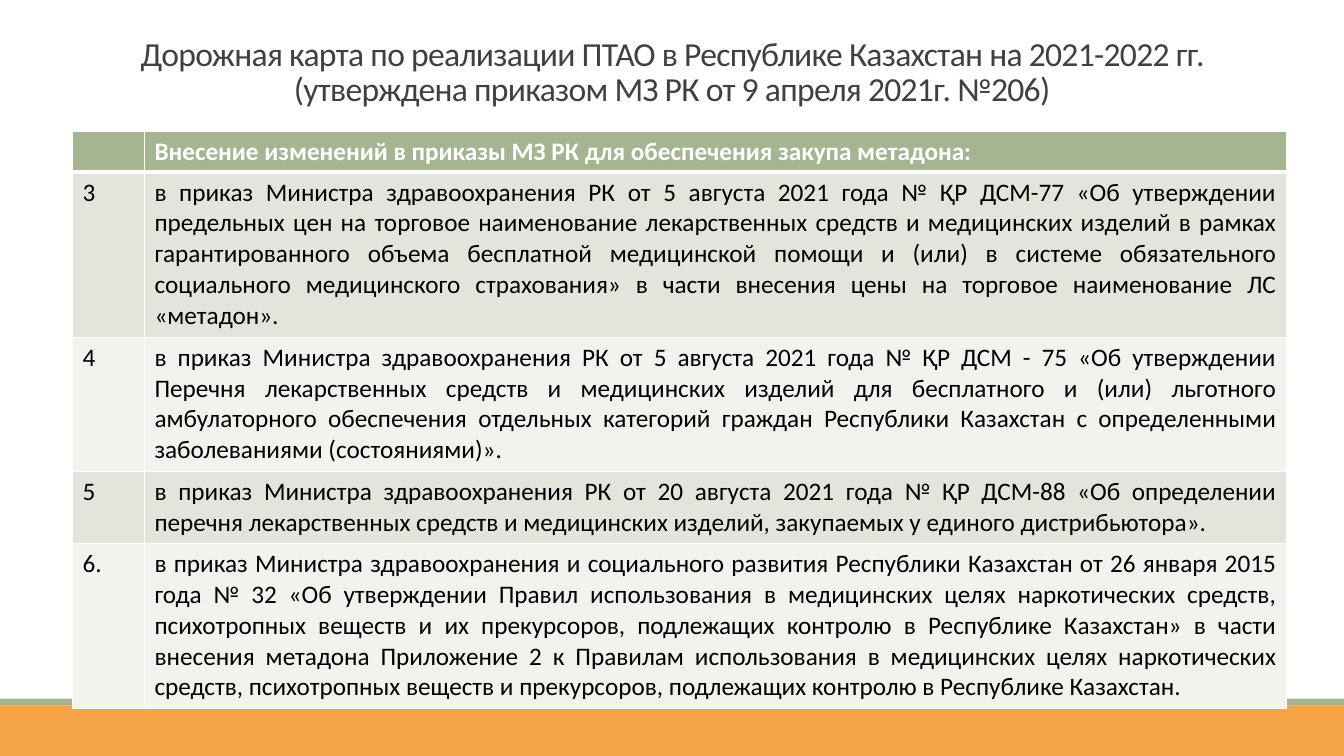
import pptx
import pptx.dml.color
import pptx.enum.shapes
import pptx.enum.text
import pptx.oxml
import pptx.oxml.ns
import pptx.util
from lxml import etree

RGBColor = pptx.dml.color.RGBColor
PP_ALIGN = pptx.enum.text.PP_ALIGN
ORANGE = RGBColor(0xF3, 0xA4, 0x47)
GREEN = RGBColor(0xA5, 0xB5, 0x92)
BAND_DARK = RGBColor(0xE1, 0xE5, 0xDC)
BAND_LIGHT = RGBColor(0xF0, 0xF3, 0xEE)
GREY = RGBColor(0x40, 0x40, 0x40)
BLACK = RGBColor(0, 0, 0)
WHITE = RGBColor(0xFF, 0xFF, 0xFF)

TITLE = ("Дорожная карта по реализации ПТАО в Республике Казахстан на 2021-2022 гг. "
         "(утверждена приказом МЗ РК от 9 апреля 2021г. №206)")
HEADING = "Внесение изменений в приказы МЗ РК для обеспечения закупа метадона:"
# Number, wording, lines of text in the row
ORDERS = [
    ("3", "в приказ Министра здравоохранения РК от 5 августа 2021 года № ҚР ДСМ-77 "
     "«Об утверждении предельных цен на торговое наименование лекарственных средств "
     "и медицинских изделий в рамках гарантированного объема бесплатной медицинской "
     "помощи и (или) в системе обязательного социального медицинского страхования» "
     "в части внесения цены на торговое наименование ЛС «метадон».", 5),
    ("4", "в приказ Министра здравоохранения РК от 5 августа 2021 года № ҚР ДСМ - 75 "
     "«Об утверждении Перечня лекарственных средств и медицинских изделий для "
     "бесплатного и (или) льготного амбулаторного обеспечения отдельных категорий "
     "граждан Республики Казахстан с определенными заболеваниями (состояниями)».", 4),
    ("5", "в приказ Министра здравоохранения РК от 20 августа 2021 года № ҚР ДСМ-88 "
     "«Об определении перечня лекарственных средств и медицинских изделий, "
     "закупаемых у единого дистрибьютора».", 2),
    ("6.", "в приказ Министра здравоохранения и социального развития Республики "
     "Казахстан от 26 января 2015 года № 32 «Об утверждении Правил использования "
     "в медицинских целях наркотических средств, психотропных веществ и их "
     "прекурсоров, подлежащих контролю в Республике Казахстан» в части внесения "
     "метадона Приложение 2 к Правилам использования в медицинских целях "
     "наркотических средств, психотропных веществ и прекурсоров, подлежащих "
     "контролю в Республике Казахстан.", 5),
]


class Deck:
    """Style and current slide; lengths are on a grid of 100 columns by 100 rows."""
    font = "Calibri"

    def __init__(self):
        self.prs = pptx.Presentation()
        self.prs.slide_width = pptx.util.Inches(13.33)
        self.prs.slide_height = pptx.util.Inches(7.5)
        self.s = self.prs.slides.add_slide(self.prs.slide_layouts[6])

    def cols(self, n):
        return round(self.prs.slide_width * n / 100)

    def rows(self, n):
        return round(self.prs.slide_height * n / 100)

    def box(self, x, y, w, h):
        return self.cols(x), self.rows(y), self.cols(w), self.rows(h)

    def style(self, p, size, color, align, bold=False):
        p.alignment = align
        p.font.name, p.font.size = self.font, pptx.util.Pt(size)
        p.font.color.rgb, p.font.bold = color, bold

    def band(self, y, h, color):
        sp = self.s.shapes.add_shape(pptx.enum.shapes.MSO_SHAPE.RECTANGLE,
                                     *self.box(0, y, 100, h))
        sp.shadow.inherit = False
        sp.fill.solid()
        sp.fill.fore_color.rgb = color
        sp.line.fill.background()

    def title(self, text, *place):
        tf = self.s.shapes.add_textbox(*self.box(*place)).text_frame
        tf.word_wrap = True
        tf.vertical_anchor = pptx.enum.text.MSO_ANCHOR.BOTTOM
        p = tf.paragraphs[0]
        r = p.add_run()
        r.text = text
        self.style(p, 24, GREY, PP_ALIGN.CENTER)
        p.line_spacing = 0.85
        r.font._element.set("spc", "-50")

    def borders(self, cell, bottom):
        tc_pr = cell._tc.get_or_add_tcPr()
        widths = {"lnL": 1, "lnR": 1, "lnT": 1, "lnB": bottom}
        for i, (side, width) in enumerate(widths.items()):
            ln = pptx.oxml.parse_xml(
                f'<a:{side} {pptx.oxml.ns.nsdecls("a")} w="{pptx.util.Pt(width)}"/>')
            fill = etree.SubElement(ln, pptx.oxml.ns.qn("a:solidFill"))
            etree.SubElement(fill, pptx.oxml.ns.qn("a:srgbClr"), val=str(WHITE))
            tc_pr.insert(i, ln)

    def cell(self, cell, text, fill, color, align, bold=False, bottom=1):
        cell.text = text
        self.style(cell.text_frame.paragraphs[0], 18, color, align, bold)
        cell.fill.solid()
        cell.fill.fore_color.rgb = fill
        self.borders(cell, bottom)

    def table(self, x, y, widths, heading, orders):
        # A row is its lines of text plus the cell margins
        heights = [1.35 + 4.1 * n for n in [1] + [n for _, _, n in orders]]
        frame = self.s.shapes.add_table(len(heights), len(widths),
                                        *self.box(x, y, sum(widths), sum(heights)))
        table = frame.table
        table.horz_banding = False
        for column, w in zip(table.columns, widths):
            column.width = self.cols(w)
        for row, h in zip(table.rows, heights):
            row.height = self.rows(h)
        for c, text in enumerate(("", heading)):
            self.cell(table.cell(0, c), text, GREEN, WHITE, PP_ALIGN.LEFT, True, 3)
        for i, (number, text, _) in enumerate(orders, 1):
            fill = BAND_DARK if i % 2 else BAND_LIGHT
            self.cell(table.cell(i, 0), number, fill, BLACK, PP_ALIGN.LEFT)
            self.cell(table.cell(i, 1), text, fill, BLACK, PP_ALIGN.JUSTIFY)


def main():
    deck = Deck()
    # Footer bands
    deck.band(93.33, 6.67, ORANGE)
    deck.band(92.4, 0.93, GREEN)
    # Heading
    deck.title(TITLE, 8.75, 4, 82.5, 10.95)
    # Orders to be amended
    deck.table(5.4, 17.33, (5.35, 85), HEADING, ORDERS)
    deck.prs.save("out.pptx")


if __name__ == "__main__":
    main()
